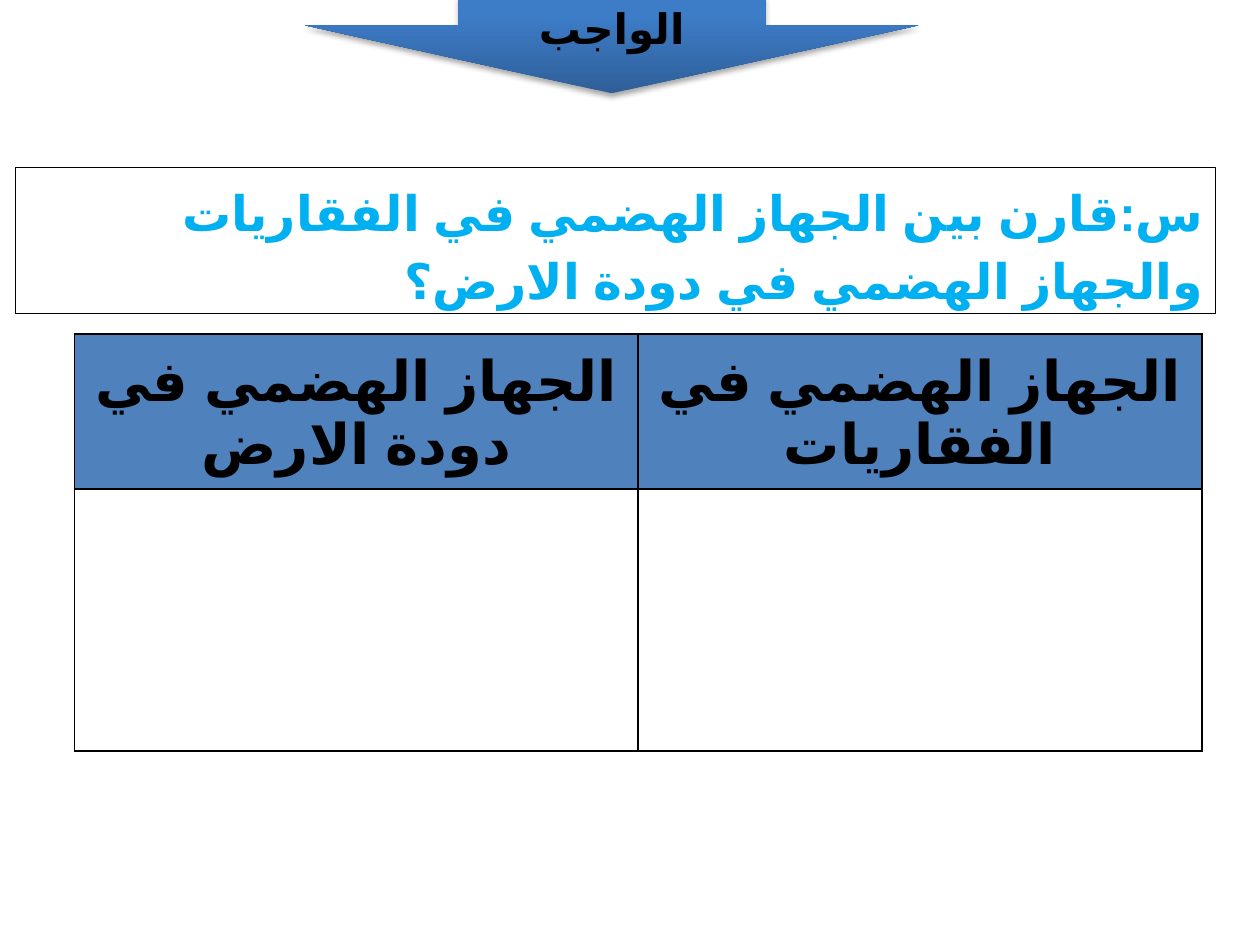
from lxml import etree
from pptx import Presentation
from pptx import util as u
from pptx.dml.color import RGBColor
from pptx.enum import shapes, text
from pptx.oxml import parse_xml
from pptx.oxml.ns import nsdecls, qn

COLORS = {"text": "000000", "question": "00B0F0", "paper": "FFFFFF",
          "header": "4F81BD", "arrow_dark": "2F5F99", "arrow_light": "3D7CC7"}
FONT, ARABIC_FONT = "Calibri", "Arial"


def rgb(name):
    return RGBColor.from_string(COLORS[name])


def box(left, top, width, height):
    return [u.Inches(v) for v in (left, top, width, height)]


def write_rtl(tf, words, size, color, align, spacing=1.0):
    """Fill a text frame with one bold right-to-left paragraph."""
    tf.text = words
    tf.word_wrap = True
    p = tf.paragraphs[0]
    p.alignment = align
    p.line_spacing = spacing
    p._p.get_or_add_pPr().set("rtl", "1")
    for r in p.runs:
        r.font.name, r.font.size, r.font.bold = FONT, u.Pt(size), True
        r.font.color.rgb = rgb(color)
        props = r._r.get_or_add_rPr()
        props.set("lang", "ar-SA")
        etree.SubElement(props, qn("a:cs"), typeface=ARABIC_FONT)


def add_arrow(slide, words):
    sp = slide.shapes.add_shape(shapes.MSO_SHAPE.DOWN_ARROW, *box(2.42, -0.03, 4.87, 0.77))
    sp.adjustments[0], sp.adjustments[1] = 0.5, 0.7
    sp.line.fill.background()
    sp.fill.gradient()
    sp.fill.gradient_angle = 90
    stops = zip(sp.fill.gradient_stops, ("arrow_dark", "arrow_light"), (0, 0.8))
    for stop, color, position in stops:
        stop.color.rgb, stop.position = rgb(color), position
    sp.shadow.inherit = False
    sp._element.spPr.find(qn("a:effectLst")).append(parse_xml(
        f'<a:outerShdw {nsdecls("a")} blurRad="{u.Pt(3.1)}" dist="{u.Pt(1.8)}" '
        f'dir="5400000" rotWithShape="0"><a:srgbClr val="{COLORS["text"]}">'
        '<a:alpha val="35000"/></a:srgbClr></a:outerShdw>'))
    write_rtl(sp.text_frame, words, 24, "text", text.PP_ALIGN.CENTER)


def set_question(slide, words):
    sp = slide.shapes.title
    sp.left, sp.top, sp.width, sp.height = box(0.12, 1.33, 9.53, 1.16)
    sp.fill.solid()
    sp.fill.fore_color.rgb = rgb("paper")
    sp.line.color.rgb = rgb("text")
    sp.line.width = u.Pt(0.5)
    tf = sp.text_frame
    tf.auto_size = text.MSO_AUTO_SIZE.NONE
    tf.vertical_anchor = text.MSO_ANCHOR.TOP
    write_rtl(tf, words, 28, "question", text.PP_ALIGN.RIGHT, 1.15)


def format_cell(cell, fill):
    cell.fill.solid()
    cell.fill.fore_color.rgb = rgb(fill)
    cell.vertical_anchor = text.MSO_ANCHOR.MIDDLE
    cell.margin_left = cell.margin_right = u.Inches(0.07)
    cell.margin_top, cell.margin_bottom = u.Inches(0.04), 0
    for i, side in enumerate(("lnL", "lnR", "lnT", "lnB")):
        cell._tc.tcPr.insert(i, parse_xml(
            f'<a:{side} {nsdecls("a")} w="{u.Pt(1)}"><a:solidFill>'
            f'<a:srgbClr val="{COLORS["text"]}"/></a:solidFill></a:{side}>'))


def add_comparison(slide, headings):
    frame = slide.shapes.add_table(2, len(headings), *box(0.59, 2.65, 8.95, 3.31))
    table = frame.table
    for row, height in zip(table.rows, (1.23, 2.08)):
        row.height = u.Inches(height)
    for col, words in enumerate(headings):
        for row, fill in enumerate(("header", "paper")):
            format_cell(table.cell(row, col), fill)
        write_rtl(table.cell(0, col).text_frame, words, 32, "text",
                  text.PP_ALIGN.CENTER)


def main():
    prs = Presentation()
    prs.slide_width, prs.slide_height = u.Inches(10), u.Inches(7.5)
    slide = prs.slides.add_slide(prs.slide_layouts[5])
    add_arrow(slide, "الواجب")
    add_comparison(slide, ["الجهاز الهضمي في دودة الارض", "الجهاز الهضمي في الفقاريات"])
    set_question(slide, "س:قارن بين الجهاز الهضمي في الفقاريات والجهاز الهضمي في دودة الارض؟")
    prs.save("out.pptx")


if __name__ == "__main__":
    main()
